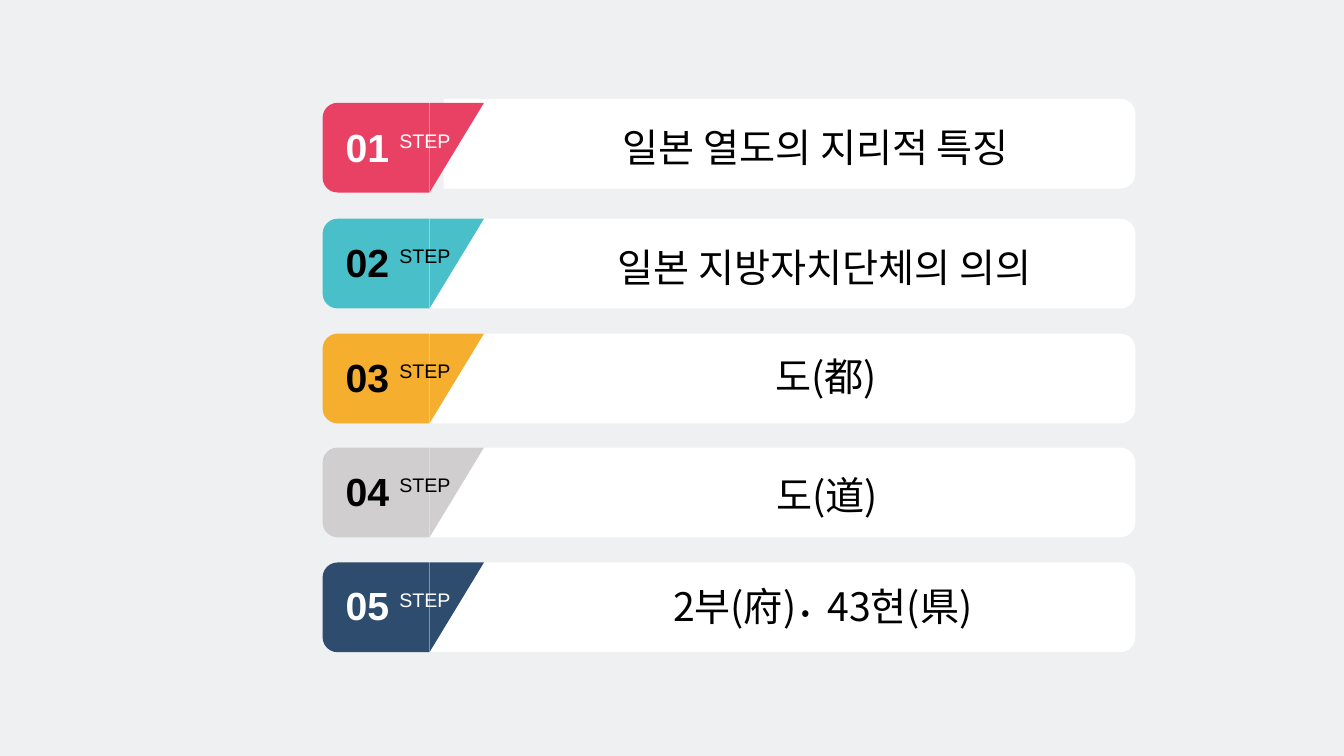
from dataclasses import dataclass

from lxml.etree import SubElement
from pptx import Presentation
from pptx.dml.color import RGBColor
from pptx.enum.shapes import MSO_SHAPE
from pptx.enum.text import MSO_ANCHOR, MSO_AUTO_SIZE, PP_ALIGN
from pptx.oxml.ns import qn
from pptx.util import Emu, Pt

EMU_PER_PX = 9144
LATIN_FONT = "Arial"
KOREAN_FONT = "Noto Sans CJK KR"
WHITE = "FFFFFF"
BLACK = "000000"
BAR_RIGHT = 1126
BAR_HEIGHT = 89
TAB_LEFT = 320
TAB_WIDTH = 106
SLANT_WIDTH = 54


@dataclass(frozen=True)
class Box:
    left: int
    top: int
    width: int
    height: int


@dataclass(frozen=True)
class Piece:
    text: str
    size: int = 28
    spacing: int = 0


@dataclass(frozen=True)
class Step:
    tab_top: int
    bar_left: int
    bar_top: int
    number_top: int
    color: str
    number_color: str
    heading_box: Box
    heading: tuple[Piece, ...]


STEPS = (
    Step(102, 440, 98, 122, "E94164", WHITE, Box(493, 122, 632, 47),
         (Piece("일본 열도의 지리적 특징"),)),
    Step(217, 426, 217, 236, "49C0C9", BLACK, Box(509, 241, 617, 47),
         (Piece("일본 지방자치단체의 의의"),)),
    Step(331, 426, 331, 350, "F6AE2E", BLACK, Box(514, 350, 611, 47),
         (Piece("도(都)"),)),
    Step(444, 426, 444, 463, "D0CECE", BLACK, Box(512, 468, 617, 47),
         (Piece("도(道)"),)),
    Step(558, 426, 558, 577, "2E4C6D", WHITE, Box(514, 578, 604, 47),
         (Piece("2부(府)"), Piece(" •", 18), Piece(" ", 18, 8), Piece("43현(県)"))),
)


def px(length: float) -> Emu:
    return Emu(round(length * EMU_PER_PX))


def paint(fill, color: str) -> None:
    fill.solid()
    fill.fore_color.rgb = RGBColor.from_string(color)


def add_turned_shape(shapes, kind: MSO_SHAPE, box: Box, rotation: int, color: str) -> None:
    shift = (box.width - box.height) / 2
    shape = shapes.add_shape(kind, px(box.left + shift), px(box.top - shift),
                             px(box.height), px(box.width))
    shape.rotation = rotation
    shape.shadow.inherit = False
    shape.line.fill.background()
    paint(shape.fill, color)


def add_text(shapes, box: Box, pieces: tuple[Piece, ...], font_name: str,
             color: str, bold: bool = False):
    text_box = shapes.add_textbox(px(box.left), px(box.top), px(box.width), px(box.height))
    text_frame = text_box.text_frame
    text_frame.word_wrap = True
    text_frame.vertical_anchor = MSO_ANCHOR.MIDDLE
    text_frame.margin_left = text_frame.margin_right = 0
    text_frame.margin_top = text_frame.margin_bottom = 0
    paragraph = text_frame.paragraphs[0]
    paragraph.alignment = PP_ALIGN.CENTER
    for piece in pieces:
        run = paragraph.add_run()
        run.text = piece.text
        run.font.size = Pt(piece.size)
        run.font.bold = bold
        run.font.color.rgb = RGBColor.from_string(color)
        run.font.name = font_name
        properties = run._r.get_or_add_rPr()
        SubElement(properties, qn("a:ea")).set("typeface", font_name)
        if piece.spacing:
            properties.set("spc", str(piece.spacing * 100))
    return text_frame


def add_step(shapes, number: int, step: Step) -> None:
    bar = Box(step.bar_left, step.bar_top, BAR_RIGHT - step.bar_left, BAR_HEIGHT)
    add_turned_shape(shapes, MSO_SHAPE.ROUND_2_SAME_RECTANGLE, bar, 90, WHITE)

    tab = shapes.add_group_shape()
    body = Box(TAB_LEFT, step.tab_top, TAB_WIDTH, BAR_HEIGHT)
    slant = Box(TAB_LEFT + TAB_WIDTH, step.tab_top, SLANT_WIDTH, BAR_HEIGHT)
    add_turned_shape(tab.shapes, MSO_SHAPE.ROUND_2_SAME_RECTANGLE, body, 270, step.color)
    add_turned_shape(tab.shapes, MSO_SHAPE.RIGHT_TRIANGLE, slant, 90, step.color)

    heading = add_text(shapes, step.heading_box, step.heading, KOREAN_FONT, BLACK)
    heading.vertical_anchor = MSO_ANCHOR.TOP
    heading.auto_size = MSO_AUTO_SIZE.SHAPE_TO_FIT_TEXT
    add_text(shapes, Box(333, step.number_top, 63, 47), (Piece(f"{number:02}"),),
             LATIN_FONT, step.number_color, bold=True)
    add_text(shapes, Box(388, step.number_top + 6, 67, 24), (Piece("STEP", 14),),
             LATIN_FONT, step.number_color)


def main() -> None:
    presentation = Presentation()
    presentation.slide_width = px(1333)
    presentation.slide_height = px(750)
    slide = presentation.slides.add_slide(presentation.slide_layouts[6])
    paint(slide.background.fill, "EEF0F2")
    for number, step in enumerate(STEPS, start=1):
        add_step(slide.shapes, number, step)
    presentation.save("out.pptx")


if __name__ == "__main__":
    main()
